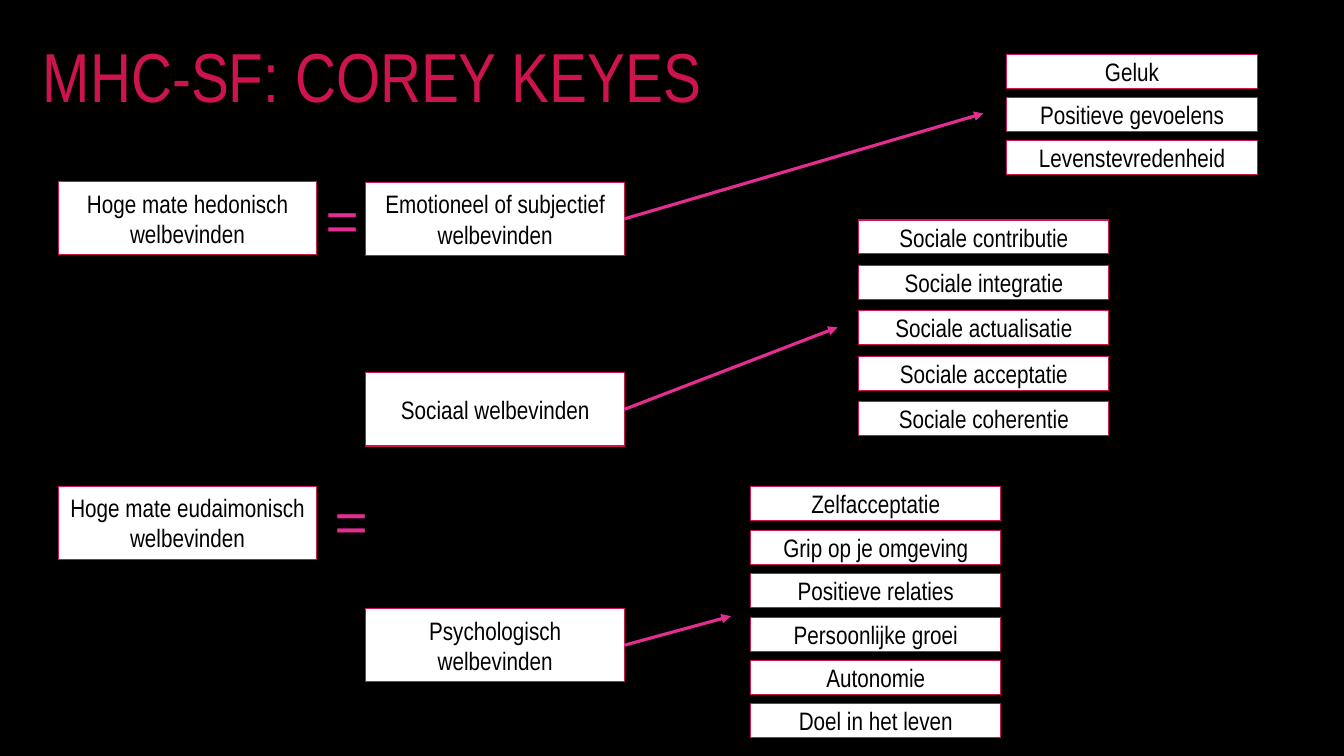
"""Build the MHC-SF slide linking kinds of well-being to their components."""
from lxml import etree
from pptx import Presentation
from pptx.dml.color import RGBColor
from pptx.enum.shapes import MSO_CONNECTOR as Connector, MSO_SHAPE as Shape
from pptx.enum.text import MSO_ANCHOR as Anchor, MSO_AUTO_SIZE as AutoSize, PP_ALIGN as Align
from pptx.oxml.ns import qn
from pptx.util import Inches, Pt

COLORS = {"background": "000000", "box": "FFFFFF", "text": "000000",
          "crimson": "CE144C", "pink": "E32D91"}
NARROW = "Arial Narrow"

TITLE = "MHC-SF: COREY KEYES"
OUTCOMES = [
    ("Hoge mate hedonisch welbevinden", 2.4),
    ("Hoge mate eudaimonisch welbevinden", 6.43),
]
EQUALS = [(4.21, 2.4), (4.33, 6.38)]
DIMENSIONS = [
    {"name": "Emotioneel of subjectief welbevinden", "top": 2.41,
     "arrow_tip": (13.01, 1.5), "first": (13.32, 0.72), "step": 0.57,
     "components": ["Geluk", "Positieve gevoelens", "Levenstevredenheid"]},
    {"name": "Sociaal welbevinden", "top": 4.93,
     "arrow_tip": (11.08, 4.33), "first": (11.36, 2.91), "step": 0.6,
     "components": ["Sociale contributie", "Sociale integratie", "Sociale actualisatie",
                    "Sociale acceptatie", "Sociale coherentie"]},
    {"name": "Psychologisch welbevinden", "top": 8.05,
     "arrow_tip": (9.67, 8.15), "first": (9.93, 6.44), "step": 0.574,
     "components": ["Zelfacceptatie", "Grip op je omgeving", "Positieve relaties",
                    "Persoonlijke groei", "Autonomie", "Doel in het leven"]},
]
OUTCOME_LEFT, DIMENSION_LEFT = 0.77, 4.84
LARGE, SMALL = (3.42, 0.97), (3.31, 0.45)


def rgb(name):
    return RGBColor.from_string(COLORS[name])


def write(frame, text, size, font, color):
    frame.word_wrap = True
    paragraph = frame.paragraphs[0]
    paragraph.text = text
    paragraph.font.size = Pt(size)
    paragraph.font.name = font
    paragraph.font.color.rgb = rgb(color)
    return paragraph


def add_label(slide, text, left, top, width, height, size, font, color):
    label = slide.shapes.add_textbox(*map(Inches, (left, top, width, height)))
    write(label.text_frame, text, size, font, color)
    label.text_frame.auto_size = AutoSize.SHAPE_TO_FIT_TEXT


def add_box(slide, text, left, top, size):
    box = slide.shapes.add_shape(Shape.RECTANGLE, *map(Inches, (left, top, *size)))
    box.shadow.inherit = False
    box.fill.solid()
    box.fill.fore_color.rgb = rgb("box")
    box.line.color.rgb = rgb("crimson")
    box.line.width = Pt(1)
    box.text_frame.vertical_anchor = Anchor.MIDDLE
    write(box.text_frame, text, 24, NARROW, "text").alignment = Align.CENTER
    return box


def add_arrow(slide, source, tip):
    end_x, end_y = map(Inches, tip)
    arrow = slide.shapes.add_connector(Connector.STRAIGHT, 0, 0, end_x, end_y)
    arrow.begin_connect(source, 3)
    arrow.line.color.rgb = rgb("pink")
    arrow.line.width = Pt(3)
    etree.SubElement(arrow.line._get_or_add_ln(), qn("a:tailEnd"), type="triangle")
    etree.SubElement(arrow._element.spPr, qn("a:effectLst"))


def main():
    deck = Presentation()
    deck.slide_width, deck.slide_height = Inches(17.78), Inches(10)
    slide = deck.slides.add_slide(deck.slide_layouts[6])
    slide.background.fill.solid()
    slide.background.fill.fore_color.rgb = rgb("background")

    add_label(slide, TITLE, 0.47, 0.39, 13.46, 1.21, 66, NARROW, "crimson")
    for outcome, top in OUTCOMES:
        add_box(slide, outcome, OUTCOME_LEFT, top, LARGE)
    for dimension in DIMENSIONS:
        source = add_box(slide, dimension["name"], DIMENSION_LEFT, dimension["top"], LARGE)
        left, first_top = dimension["first"]
        for row, component in enumerate(dimension["components"]):
            add_box(slide, component, left, first_top + row * dimension["step"], SMALL)
        add_arrow(slide, source, dimension["arrow_tip"])
    for left, top in EQUALS:
        add_label(slide, "=", left, top, 0.69, 1.01, 54, "Arial", "pink")

    deck.save("out.pptx")


if __name__ == "__main__":
    main()
